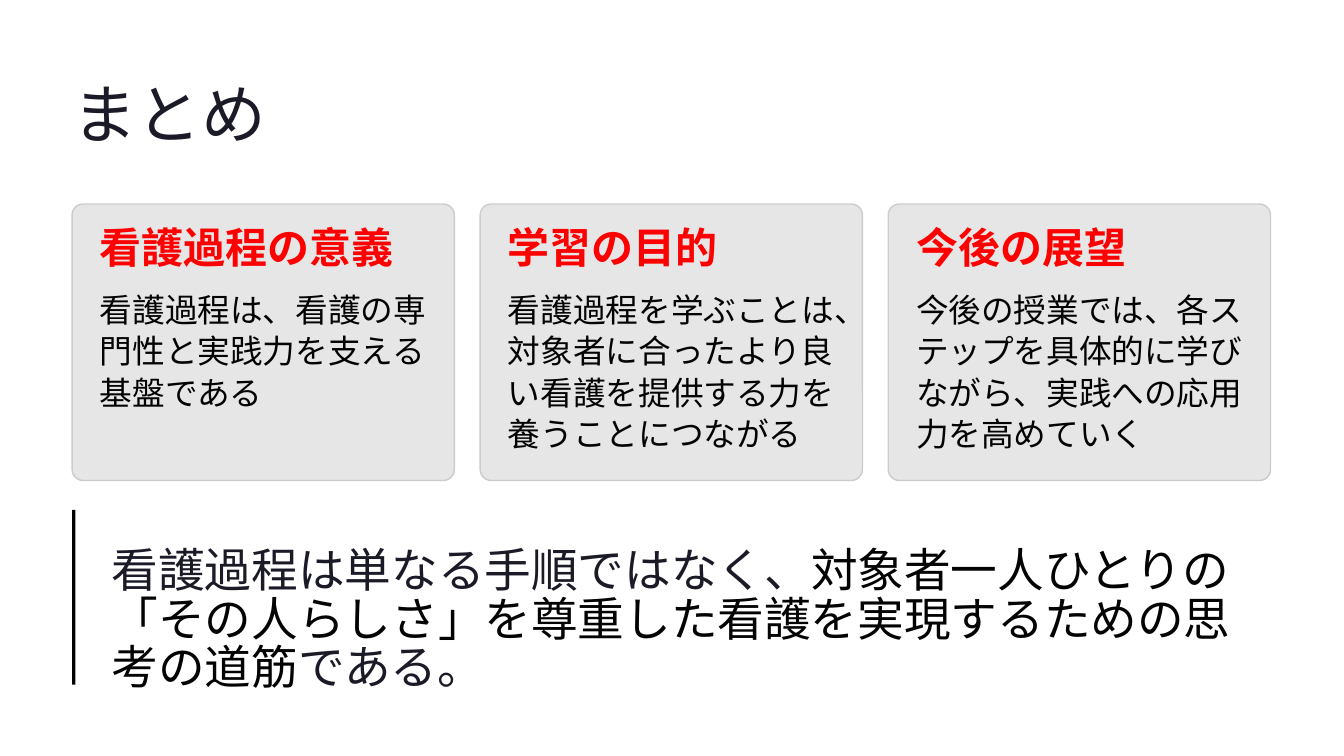
"""Build the summary slide on the nursing process."""
from pptx import Presentation
from pptx.dml.color import RGBColor
from pptx.enum.shapes import MSO_SHAPE as Preset
from pptx.enum.text import MSO_ANCHOR as Anchor, MSO_AUTO_SIZE as AutoSize, PP_ALIGN as Align
from pptx.util import Cm, Pt

NAVY = RGBColor(0x1B, 0x1B, 0x27)
INK = RGBColor(0x03, 0x03, 0x03)
RED = RGBColor(0xFF, 0x00, 0x00)
CARD_FILL = RGBColor(0xE6, 0xE6, 0xE6)
CARD_EDGE = RGBColor(0xCC, 0xCC, 0xCC)

FRAME = {
    "margin_left": 0, "margin_top": 0, "margin_right": 0, "margin_bottom": 0,
    "word_wrap": True, "auto_size": AutoSize.NONE, "vertical_anchor": Anchor.TOP,
}
TITLE = {"name": "Inter", "size": Pt(55.5), "bold": False}
HEADING = {"name": "Inter", "size": Pt(36), "bold": True}
BODY = {"name": "Cabin", "size": Pt(28), "bold": False}
CONCLUSION = {"name": "Inter", "size": Pt(40), "bold": False}

LEFT = Cm(2.18)
CARD_TOP, CARD_WIDTH, CARD_HEIGHT = Cm(6.17), Cm(11.56), Cm(8.36)
CARD_PITCH = Cm(12.34)
CARD_PADDING = Cm(0.84)
BODY_LINE = Cm(1.26)

CARDS = [
    ("看護過程の意義", "看護過程は、看護の専門性と実践力を支える基盤である", 3),
    ("学習の目的", "看護過程を学ぶことは、対象者に合ったより良い看護を提供する力を養うことにつながる", 4),
    ("今後の展望", "今後の授業では、各ステップを具体的に学びながら、実践への応用力を高めていく", 4),
]
CONCLUSION_PARTS = [
    ("看護過程は単なる手順ではなく、", NAVY),
    ("対象者一人ひとりの「その人らしさ」を尊重した看護を実現するための思考の道筋", INK),
    ("である。", NAVY),
]


def apply(target, values):
    """Set every named attribute on the target."""
    for attribute, value in values.items():
        setattr(target, attribute, value)


def write(holder, parts, style, line_height):
    """Write coloured parts as one left-aligned paragraph."""
    apply(holder.text_frame, FRAME)
    paragraph = holder.text_frame.paragraphs[0]
    apply(paragraph, {"alignment": Align.LEFT, "line_spacing": Pt(line_height)})
    for wording, colour in parts:
        run = paragraph.add_run()
        run.text = wording
        apply(run.font, style)
        run.font.color.rgb = colour


def add_title(slide, wording):
    """Place and format the slide title."""
    title = slide.shapes.title
    apply(title, {"left": LEFT, "top": Cm(2.16), "width": Cm(19.58), "height": Cm(2.44)})
    write(title, [(wording, NAVY)], TITLE, 69)


def add_text(slide, box, parts, style, line_height):
    """Add a text box without margins."""
    write(slide.shapes.add_textbox(*box), parts, style, line_height)


def add_panel(slide, preset, box, fill):
    """Add a flat filled shape without an outline."""
    panel = slide.shapes.add_shape(preset, *box)
    panel.shadow.inherit = False
    panel.fill.solid()
    panel.fill.fore_color.rgb = fill
    panel.line.fill.background()
    return panel


def add_card(slide, left, heading, body, body_lines):
    """Add a rounded card with its heading and body."""
    card = add_panel(slide, Preset.ROUNDED_RECTANGLE,
                     (left, CARD_TOP, CARD_WIDTH, CARD_HEIGHT), CARD_FILL)
    card.adjustments[0] = 0.04
    card.line.color.rgb = CARD_EDGE
    card.line.width = Pt(1.2)
    text_left = left + CARD_PADDING
    add_text(slide, (text_left, CARD_TOP + CARD_PADDING, Cm(9.8), Cm(1.22)),
             [(heading, RED)], HEADING, 34.5)
    add_text(slide, (text_left, Cm(8.69), Cm(9.91), BODY_LINE * body_lines),
             [(body, INK)], BODY, 35.5)


def main():
    """Build and save the slide."""
    deck = Presentation()
    apply(deck, {"slide_width": Cm(40.64), "slide_height": Cm(22.86)})
    slide = deck.slides.add_slide(deck.slide_layouts.get_by_name("Title Only"))
    add_title(slide, "まとめ")
    for index, card in enumerate(CARDS):
        add_card(slide, LEFT + CARD_PITCH * index, *card)
    add_text(slide, (Cm(3.38), Cm(16.59), Cm(35.08), Cm(2.95)),
             CONCLUSION_PARTS, CONCLUSION, 41.5)
    add_panel(slide, Preset.RECTANGLE, (LEFT, Cm(15.42), Cm(0.1), Cm(5.28)), INK)
    deck.save("out.pptx")


if __name__ == "__main__":
    main()
